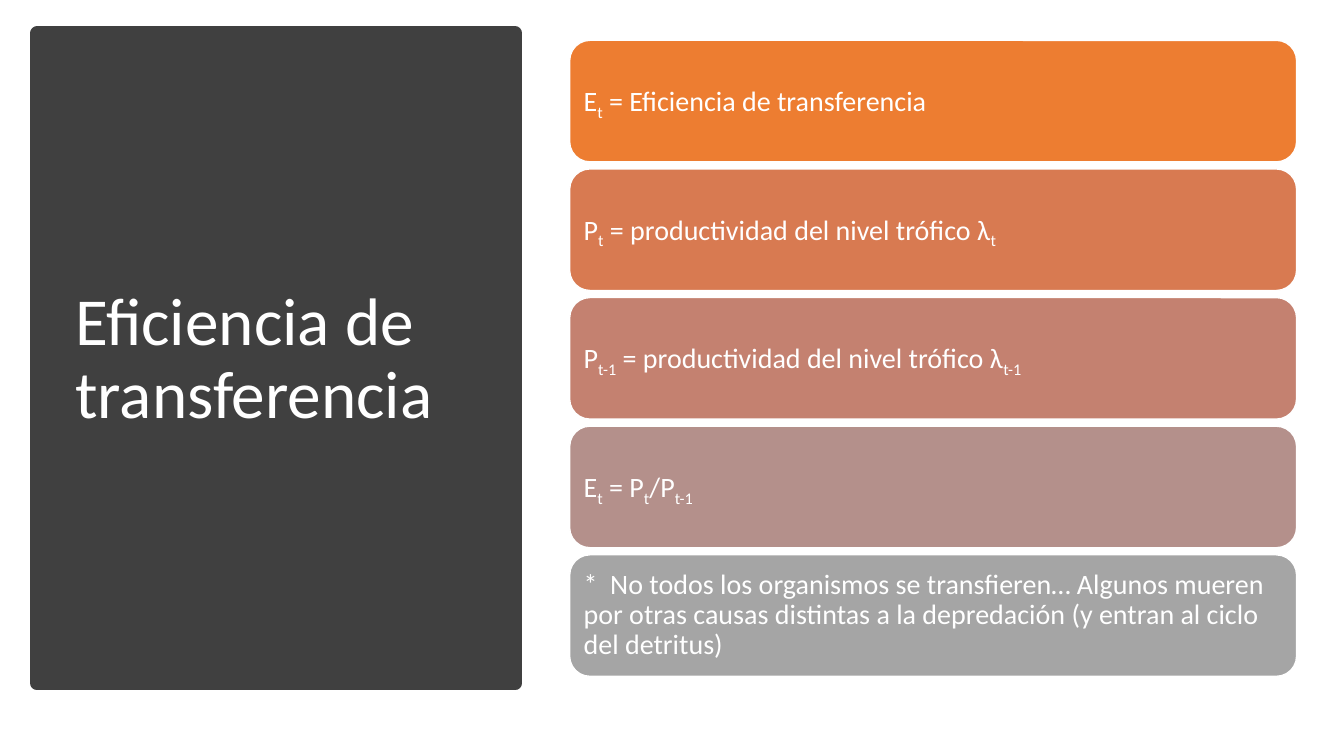
from pptx import Presentation
from pptx.dml.color import RGBColor
from pptx.enum.shapes import MSO_SHAPE
from pptx.enum.text import MSO_ANCHOR, PP_ALIGN
from pptx.util import Inches, Pt

RECTANGLE = MSO_SHAPE.RECTANGLE
ROUNDED = MSO_SHAPE.ROUNDED_RECTANGLE
MIDDLE = MSO_ANCHOR.MIDDLE
LEFT = PP_ALIGN.LEFT

FONT = "Calibri"
WHITE = "FFFFFF"
DARK = "404040"
BLANK_LAYOUT = 6

TITLE = "Eficiencia de transferencia"
# Each definition: fill colour, then text pieces that alternate normal and subscript.
DEFINITIONS = [
    ("ED7D31", ["E", "t", " = Eficiencia de transferencia"]),
    ("D87A51", ["P", "t", " = productividad del nivel trófico λ", "t"]),
    ("C48170", ["P", "t-1", " = productividad del nivel trófico λ", "t-1"]),
    ("B4908B", ["E", "t", " = P", "t", "/P", "t-1"]),
    ("A5A5A5", ["*  No todos los organismos se transfieren… Algunos mueren por "
                "otras causas distintas a la depredación (y entran al ciclo "
                "del detritus)"]),
]


def color(hex_text):
    return RGBColor.from_string(hex_text)


def add_block(slide, kind, box, fill, line, line_width):
    shape = slide.shapes.add_shape(kind, *map(Inches, box))
    shape.shadow.inherit = False
    shape.fill.solid()
    shape.fill.fore_color.rgb = color(fill)
    shape.line.color.rgb = color(line)
    shape.line.width = Pt(line_width)
    return shape


def write(frame, pieces, size, inset):
    """Fill the frame with one paragraph; every second piece is a subscript."""
    frame.word_wrap = True
    frame.vertical_anchor = MIDDLE
    frame.margin_left = frame.margin_right = Inches(inset)
    frame.margin_top = frame.margin_bottom = Inches(inset)
    para = frame.paragraphs[0]
    para.alignment = LEFT
    para.line_spacing = 0.9
    for index, piece in enumerate(pieces):
        span = para.add_run()
        span.text = piece
        span.font.name = FONT
        span.font.size = Pt(size)
        span.font.color.rgb = color(WHITE)
        if index % 2:
            span._r.get_or_add_rPr().set("baseline", "-25000")


def add_title_panel(slide, box):
    left, top, width, height = box
    add_block(slide, RECTANGLE, box, DARK, DARK, 10)
    title = slide.shapes.add_textbox(
        Inches(left + 0.28), Inches(top + 0.37),
        Inches(width - 0.58), Inches(height - 0.7))
    write(title.text_frame, [TITLE], 48, 0.1)


def add_definitions(slide, box, gap):
    """Stack the definitions in equal rows that fill the box."""
    left, top, width, height = box
    pitch = (height + gap) / len(DEFINITIONS)
    for row, (fill, pieces) in enumerate(DEFINITIONS):
        row_box = (left, top + row * pitch, width, pitch - gap)
        block = add_block(slide, ROUNDED, row_box, fill, WHITE, 1)
        write(block.text_frame, pieces, 20, 0.08)


def main():
    deck = Presentation()
    deck.slide_width = Inches(13.33)
    deck.slide_height = Inches(7.5)
    slide = deck.slides.add_slide(deck.slide_layouts[BLANK_LAYOUT])
    add_title_panel(slide, (0.37, 0.33, 4.74, 6.45))
    add_definitions(slide, (5.65, 0.4, 7.21, 6.31), 0.07)
    deck.save("out.pptx")


if __name__ == "__main__":
    main()
